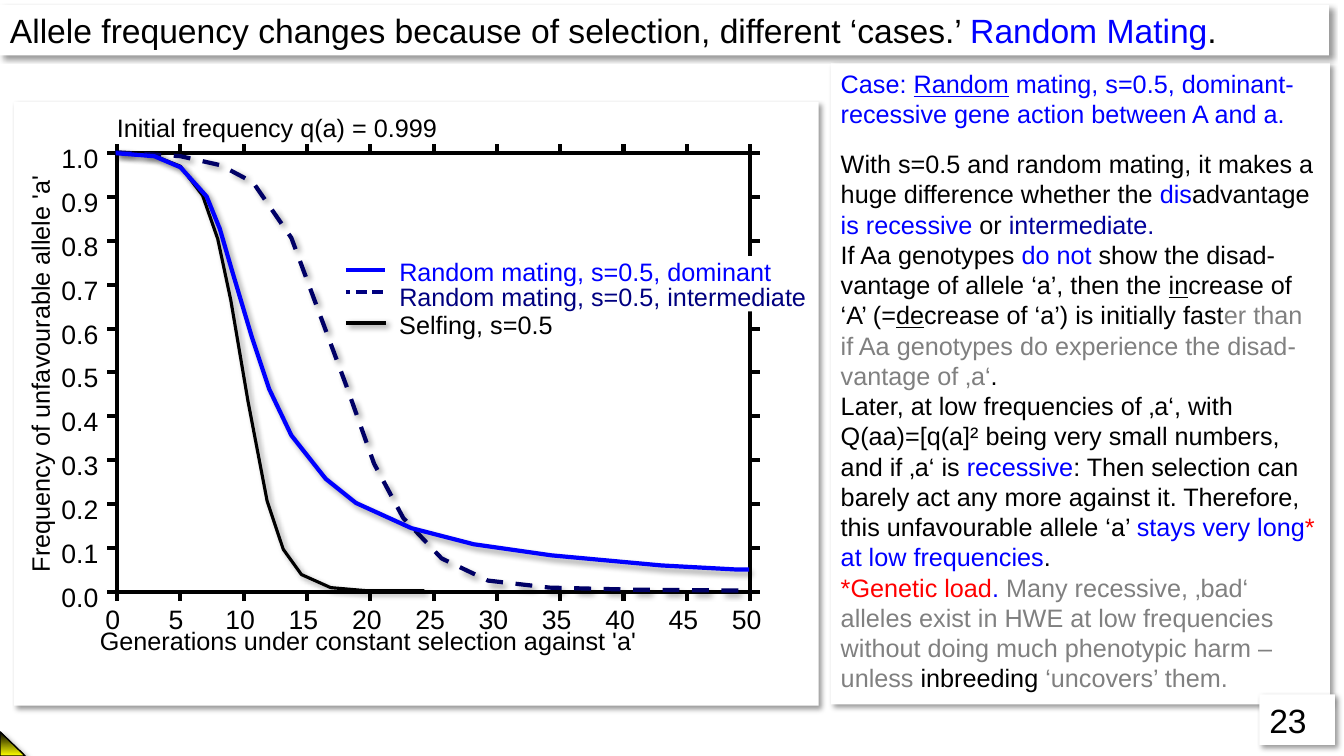
import copy

import lxml.etree
import pptx
import pptx.dml.color
import pptx.enum.dml
import pptx.enum.shapes
import pptx.enum.text
import pptx.oxml
import pptx.oxml.ns
import pptx.util

Inches = pptx.util.Inches
color = pptx.dml.color.RGBColor.from_string
dashes = pptx.enum.dml.MSO_LINE
shapes = pptx.enum.shapes.MSO_SHAPE

BLACK, WHITE, BLUE, NAVY = "000000", "FFFFFF", "0000FF", "000080"
GRAY, RED, INTERMEDIATE = "808080", "FF0000", "000099"
SHADOW = pptx.oxml.parse_xml(
    f'<a:outerShdw {pptx.oxml.ns.nsdecls("a")} blurRad="50800" dist="38100" dir="2700000" '
    'algn="tl" rotWithShape="0"><a:srgbClr val="000000"><a:alpha val="40000"/></a:srgbClr></a:outerShdw>'
)

presentation = pptx.Presentation()
presentation.slide_width = Inches(13.33)
presentation.slide_height = Inches(7.5)
slide = presentation.slides.add_slide(presentation.slide_layouts[6])


def add_line(points, line_color=BLACK, width=2.88, dash=None, shadow=False):
    points = [(Inches(x), Inches(y)) for x, y in points]
    if len(points) == 2:
        straight = pptx.enum.shapes.MSO_CONNECTOR.STRAIGHT
        shape = slide.shapes.add_connector(straight, *points[0], *points[1])
    else:
        builder = slide.shapes.build_freeform(*points[0])
        builder.add_line_segments(points[1:], close=False)
        shape = builder.convert_to_shape()
        shape.fill.background()
    shape.line.color.rgb = color(line_color)
    shape.line.width = pptx.util.Pt(width)
    if dash:
        shape.line.dash_style = dash
    effects = lxml.etree.SubElement(shape._element.spPr, pptx.oxml.ns.qn("a:effectLst"))
    if shadow:
        effects.append(copy.deepcopy(SHADOW))


def add_box(place, paragraphs=(), size=18, filled=False, shadow=False, geometry=shapes.RECTANGLE):
    place = [Inches(length) for length in place]
    if filled:
        shape = slide.shapes.add_shape(geometry, *place)
        shape.fill.solid()
        shape.fill.fore_color.rgb = color(WHITE)
        shape.line.fill.background()
        shape.shadow.inherit = False
    else:
        shape = slide.shapes.add_textbox(*place)
    if shadow:
        shape._element.spPr.find(pptx.oxml.ns.qn("a:effectLst")).append(copy.deepcopy(SHADOW))
    frame = shape.text_frame
    frame.word_wrap = True
    frame.vertical_anchor = pptx.enum.text.MSO_ANCHOR.TOP
    if not shadow:
        frame.margin_left = frame.margin_right = frame.margin_top = frame.margin_bottom = 0
    for index, runs in enumerate(paragraphs):
        paragraph = frame.paragraphs[0] if index == 0 else frame.add_paragraph()
        paragraph.alignment = pptx.enum.text.PP_ALIGN.LEFT
        paragraph.font.name = "Arial"
        paragraph.font.size = pptx.util.Pt(size)
        for text, run_color, *underlined in runs:
            run = paragraph.add_run()
            run.text = text
            run.font.color.rgb = color(run_color)
            if underlined:
                run.font.underline = True
    return shape


add_box((0.14, 1.01, 7.98, 5.99), filled=True, shadow=True)

left, right, top, bottom = 1.16, 7.44, 1.52, 5.87
for x in (left, right):
    add_line([(x, bottom), (x, top)])
for y in (bottom, top):
    add_line([(left, y), (right, y)])

for step in range(11):
    y = bottom - step * (bottom - top) / 10
    add_line([(left, y), (left - 0.1, y)])
    if step != 7:
        add_line([(right, y), (right + 0.1, y)])
    add_box((0.61, y - 0.11, 0.42, 0.29), [[(f"{step / 10:.1f}", BLACK)]], 19)

    x = left + step * (right - left) / 10
    add_line([(x, bottom), (x, bottom + 0.09)])
    add_line([(x, top), (x, top - 0.09)])
    label = str(step * 5)
    width = 0.23 if len(label) == 1 else 0.36
    add_box((x - width / 2, 5.98, width, 0.29), [[(label, BLACK)]], 19)

axis_title = add_box((-1.59, 3.54, 3.97, 0.3), [[("Frequency of unfavourable allele 'a'", BLACK)]])
axis_title.rotation = 270
add_box((0.99, 6.2, 5.37, 0.3), [[("Generations under constant selection against 'a'", BLACK)]])
add_box((1.16, 1.11, 3.2, 0.3), [[("Initial frequency q(a) = 0.999", BLACK)]])

selfing = [
    (1.15, 1.52), (1.54, 1.55), (1.79, 1.65), (2.01, 1.94), (2.16, 2.37), (2.29, 2.98), (2.46, 3.98),
    (2.65, 4.97), (2.81, 5.45), (2.99, 5.7), (3.28, 5.83), (3.63, 5.86), (4.21, 5.86),
]
intermediate = [
    (1.14, 1.51), (1.79, 1.55), (2.19, 1.64), (2.51, 1.81), (2.89, 2.36), (3.44, 3.84), (3.71, 4.6),
    (4, 5.14), (4.38, 5.54), (4.84, 5.76), (5.45, 5.83), (6.26, 5.85), (7.45, 5.86),
]
dominant = [
    (1.15, 1.52), (1.53, 1.55), (1.79, 1.66), (2.05, 1.95), (2.18, 2.27), (2.3, 2.68), (2.5, 3.35),
    (2.67, 3.86), (2.89, 4.32), (3.23, 4.75), (3.53, 4.99), (4.08, 5.24), (4.7, 5.4), (5.47, 5.51),
    (6.56, 5.61), (7.3, 5.65), (7.43, 5.65),
]
add_line(selfing, width=2.25, shadow=True)
add_line(intermediate, "000066", 3, dashes.DASH, shadow=True)
add_line(dominant, BLUE, 3, shadow=True)

add_box((3.96, 3.07, 1.66, 0.3), [[("Selfing, s=0.5", BLACK)]])
add_box((3.96, 2.79, 4.11, 0.3), [[("Random mating, s=0.5, intermediate", NAVY)]], filled=True)
add_box((3.96, 2.54, 4.09, 0.3), [[("Random mating, s=0.5, dominant", BLUE)]], filled=True)
add_line([(3.43, 2.68), (3.82, 2.68)], BLUE)
for start, end in ((3.43, 3.47), (3.53, 3.64), (3.69, 3.8)):
    add_line([(start, 2.9), (end, 2.9)], NAVY, dash=dashes.SQUARE_DOT)
add_line([(3.43, 3.2), (3.83, 3.2)], shadow=True)

title = [
    ("Allele frequency changes because of selection, different ‘cases.’ ", BLACK),
    ("Random Mating", BLUE),
    (".", BLACK),
]
add_box((0, 0.05, 13.18, 0.5), [title], 24, filled=True, shadow=True)

explanation = [
    [
        ("Case: ", BLUE),
        ("Random", BLUE, True),
        (" mating, s=0.5, dominant-recessive gene action between A and a.", BLUE),
    ],
    [
        ("With s=0.5 and random mating, it makes a huge difference whether the ", BLACK),
        ("dis", BLUE),
        ("advantage", BLACK),
        (" is recessive ", BLUE),
        ("or ", BLACK),
        ("intermediate.", INTERMEDIATE),
    ],
    [
        ("If Aa genotypes ", BLACK),
        ("do not ", BLUE),
        ("show the disad-vantage of allele ‘a’, then the ", BLACK),
        ("in", BLACK, True),
        ("crease of ‘A’ (=", BLACK),
        ("de", BLACK, True),
        ("crease of ‘a’) is initially fast", BLACK),
        ("er than if Aa genotypes do experience the disad-vantage of ‚a‘", GRAY),
        (".", BLACK),
    ],
    [
        ("Later, at low frequencies of ‚a‘, with Q(aa)=[q(a]² being very small numbers, and if ‚a‘ is ", BLACK),
        ("recessive", BLUE),
        (": Then selection can barely act any more against it. Therefore, this unfavourable allele ‘a’ ", BLACK),
        ("stays very long", BLUE),
        ("*", RED),
        (" at low frequencies", BLUE),
        (".", BLACK),
    ],
    [
        ("*Genetic load", RED),
        (". ", BLUE),
        ("Many recessive, ‚bad‘ alleles exist in HWE at low frequencies without doing much "
         "phenotypic harm – unless ", GRAY),
        ("inbreeding", BLACK),
        (" ‘uncovers’ them.", GRAY),
    ],
]
panel = add_box((8.24, 0.63, 4.95, 6.36), explanation, filled=True, shadow=True)
panel.text_frame.paragraphs[1].space_before = pptx.util.Pt(14)

corner = add_box((0, 7.26, 0.25, 0.24), filled=True, shadow=True, geometry=shapes.RIGHT_TRIANGLE)
corner.fill.gradient()
corner.fill.gradient_angle = 270
for stop, stop_color in zip(corner.fill.gradient_stops, (BLACK, "FFFF00")):
    stop.color.rgb = color(stop_color)
corner.line.color.rgb = color(BLACK)
corner.line.width = pptx.util.Pt(1)

add_box((12.49, 6.89, 0.75, 0.5), [[("23", BLACK)]], 24, filled=True, shadow=True)

presentation.save("out.pptx")
